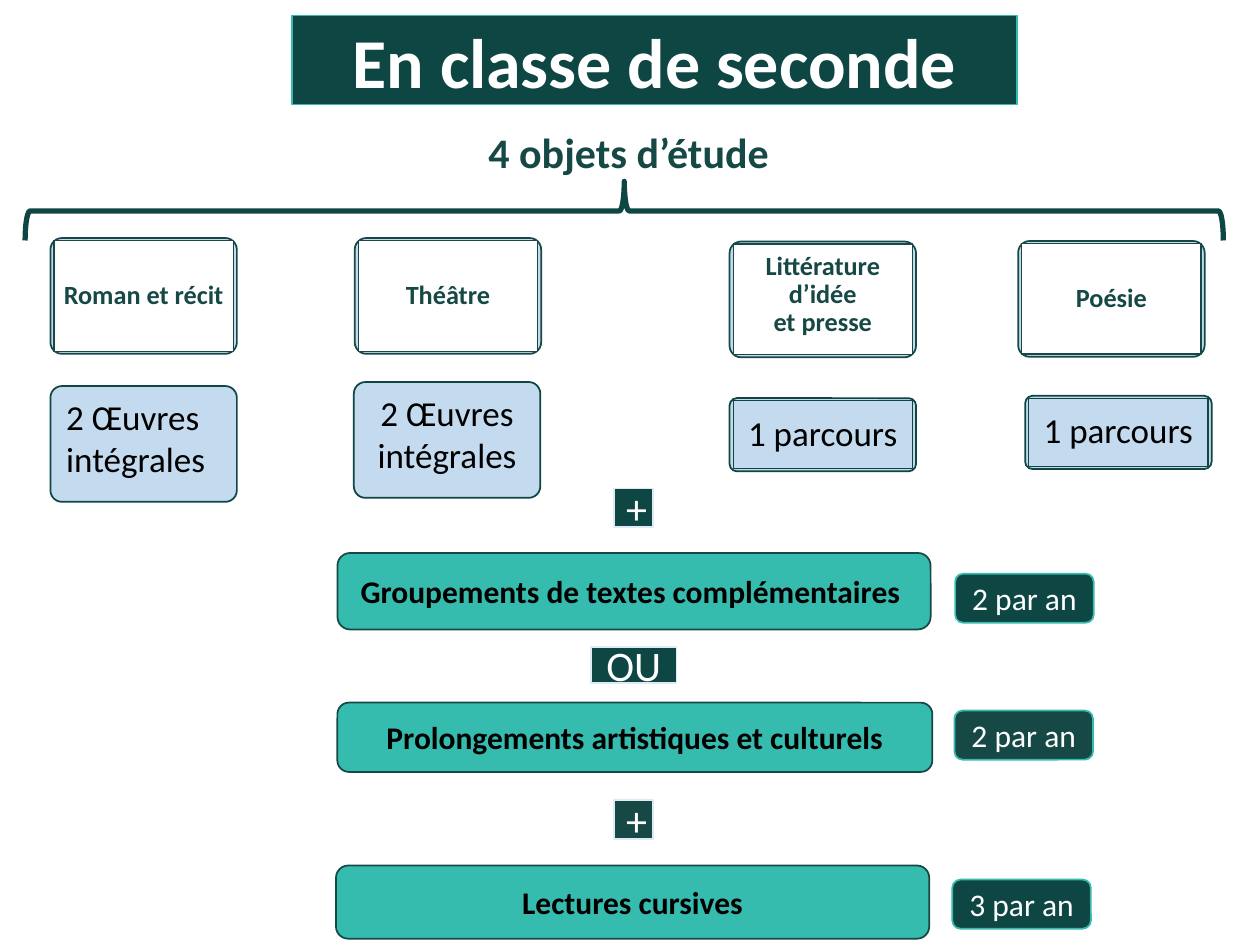
from lxml import etree
from pptx import Presentation
from pptx.dml.color import RGBColor
from pptx.enum.shapes import MSO_SHAPE
from pptx.enum.text import MSO_ANCHOR, PP_ALIGN
from pptx.oxml.ns import qn
from pptx.util import Pt

RECT, ROUNDED = MSO_SHAPE.RECTANGLE, MSO_SHAPE.ROUNDED_RECTANGLE
BRACE = MSO_SHAPE.LEFT_BRACE
LEFT, CENTER = PP_ALIGN.LEFT, PP_ALIGN.CENTER
TOP, MIDDLE = MSO_ANCHOR.TOP, MSO_ANCHOR.MIDDLE

COLORS = {
    "dark": "0D4643",
    "slate": "164945",
    "teal": "36BBAF",
    "blue": "BDD7EE",
    "pale": "DEEBF7",
    "white": "FFFFFF",
    "black": "000000",
}
FONT = "Calibri"
CARD_WIDTH = 106.56
FRAME_INSET = 2.1
CARD_MARGINS = (2, 1.5, 2, 1.5)
DEFAULT_MARGINS = (7.2, 3.6, 7.2, 3.6)


def rgb(name):
    return RGBColor.from_string(COLORS[name])


def write(shape, text, size, color, bold=False, align=CENTER, anchor=MIDDLE,
          margins=DEFAULT_MARGINS, spacing=None):
    frame = shape.text_frame
    frame.word_wrap = True
    frame.vertical_anchor = anchor
    (frame.margin_left, frame.margin_top,
     frame.margin_right, frame.margin_bottom) = map(Pt, margins)
    frame.text = text
    for paragraph in frame.paragraphs:
        paragraph.alignment = align
        paragraph.line_spacing = spacing
        for run in paragraph.runs:
            run.font.name = FONT
            run.font.size = Pt(size)
            run.font.bold = bold
            run.font.color.rgb = rgb(color)


def add_box(shapes, kind, bounds, fill, line, weight=1, alpha=None, corner=None):
    """Add a preset shape; alpha is the fill's opacity in percent."""
    box = shapes.add_shape(kind, *map(Pt, bounds))
    box.shadow.inherit = False
    if fill:
        box.fill.solid()
        box.fill.fore_color.rgb = rgb(fill)
    else:
        box.fill.background()
    if alpha:
        fill_color = box._element.spPr.find(qn("a:solidFill"))[0]
        etree.SubElement(fill_color, qn("a:alpha"), val=str(alpha * 1000))
    if corner:
        box.adjustments[0] = corner
    box.line.color.rgb = rgb(line)
    box.line.width = Pt(weight)
    return box


def add_card(shapes, left, top, height, line):
    return add_box(shapes, ROUNDED, (left, top, CARD_WIDTH, height), "blue", line,
                   alpha=90, corner=0.1)


def add_framed_card(slide, left, top, height, text, line, fill=None,
                    margins=CARD_MARGINS, **text_format):
    """Group a rounded card with the thin rectangle that holds its text."""
    group = slide.shapes.add_group_shape()
    add_card(group.shapes, left, top, height, line)
    bounds = (left + FRAME_INSET, top + 1.5, CARD_WIDTH - 2 * FRAME_INSET, height - 3)
    frame = add_box(group.shapes, RECT, bounds, fill, line, weight=0.75)
    write(frame, text, margins=margins, spacing=0.9, **text_format)


def add_title(slide):
    title = add_box(slide.shapes, RECT, (167, 8.8, 414, 51), "dark", "teal")
    write(title, "En classe de seconde", 40, "white", bold=True)
    heading = slide.shapes.add_textbox(Pt(272), Pt(68.5), Pt(176), Pt(36))
    write(heading, "4 objets d’étude", 24, "slate", bold=True, align=LEFT, anchor=TOP)
    brace = add_box(slide.shapes, BRACE, (339.8, -221.8, 33.8, 684.7), None, "dark", 3)
    brace.rotation = 90


def add_study_objects(slide):
    raised = (2, 1.5, 2, 6.5)
    for left, top, genre, margins in (
        (28.8, 136, "Roman et récit", CARD_MARGINS),
        (202.7, 136, "Théâtre", CARD_MARGINS),
        (416.9, 138, "Littérature d’idée\vet presse", raised),
        (581.8, 137.7, "Poésie", CARD_MARGINS),
    ):
        add_framed_card(slide, left, top, 66.2, genre, "slate", fill="white",
                        margins=margins, size=15, color="slate", bold=True)


def add_requirements(slide):
    for left, top, works, align in (
        (28.8, 220.6, "2 Œuvres\nintégrales", LEFT),
        (202.2, 218.3, "2 Œuvres intégrales", CENTER),
    ):
        card = add_card(slide.shapes, left, top, 66.2, "dark")
        write(card, works, 20, "black", align=align, anchor=TOP)
    for left, top in ((416.9, 227.5), (585.8, 226.2)):
        add_framed_card(slide, left, top, 41.8, "1 parcours", "dark",
                        size=20, color="black")


def add_activities(slide):
    for left, top, width, height, activity in (
        (192.8, 316, 339, 43.7, "Groupements de textes complémentaires "),
        (192.8, 401.5, 340, 39.6, "Prolongements artistiques et culturels"),
        (192, 494.6, 339, 41.8, "Lectures cursives"),
    ):
        bar = add_box(slide.shapes, ROUNDED, (left, top, width, height), "teal", "slate")
        write(bar, activity, 18, "black", bold=True)
    for left, top, count, fill in (
        (545.8, 327.8, "2 par an", "dark"),
        (545.4, 406, "2 par an", "slate"),
        (544.2, 502.6, "3 par an", "dark"),
    ):
        badge = add_box(slide.shapes, ROUNDED, (left, top, 79.2, 28.1), fill, "teal")
        write(badge, count, 18, "white")
    for left, top, width, height, operator, fill in (
        (350.8, 279.1, 22.5, 22, "+", "dark"),
        (337.8, 369.7, 48.8, 20.7, "OU", "dark"),
        (350.8, 457.3, 22.5, 22, "+", "slate"),
    ):
        link = add_box(slide.shapes, RECT, (left, top, width, height), fill, "pale")
        write(link, operator, 24, "white")


def main():
    presentation = Presentation()
    presentation.slide_width, presentation.slide_height = Pt(720), Pt(540)
    slide = presentation.slides.add_slide(presentation.slide_layouts[6])
    add_title(slide)
    add_study_objects(slide)
    add_requirements(slide)
    add_activities(slide)
    presentation.save("out.pptx")


if __name__ == "__main__":
    main()
